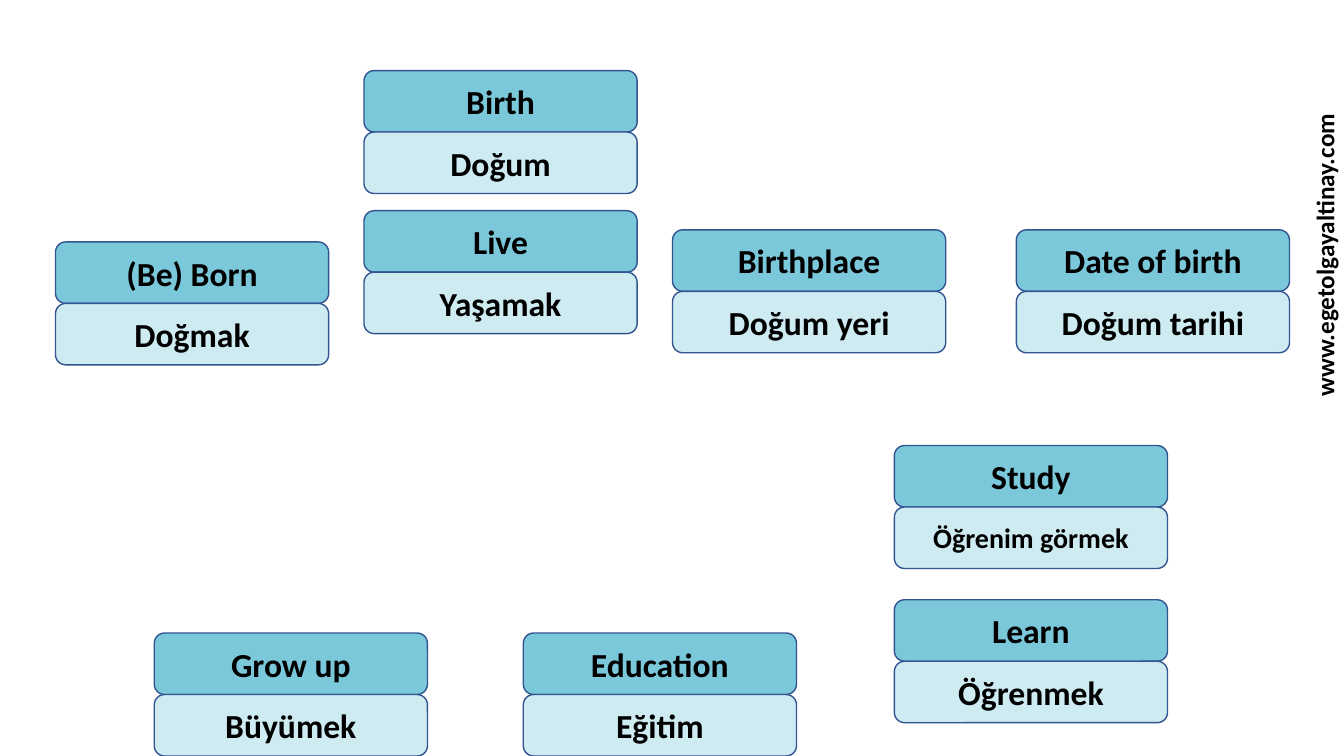
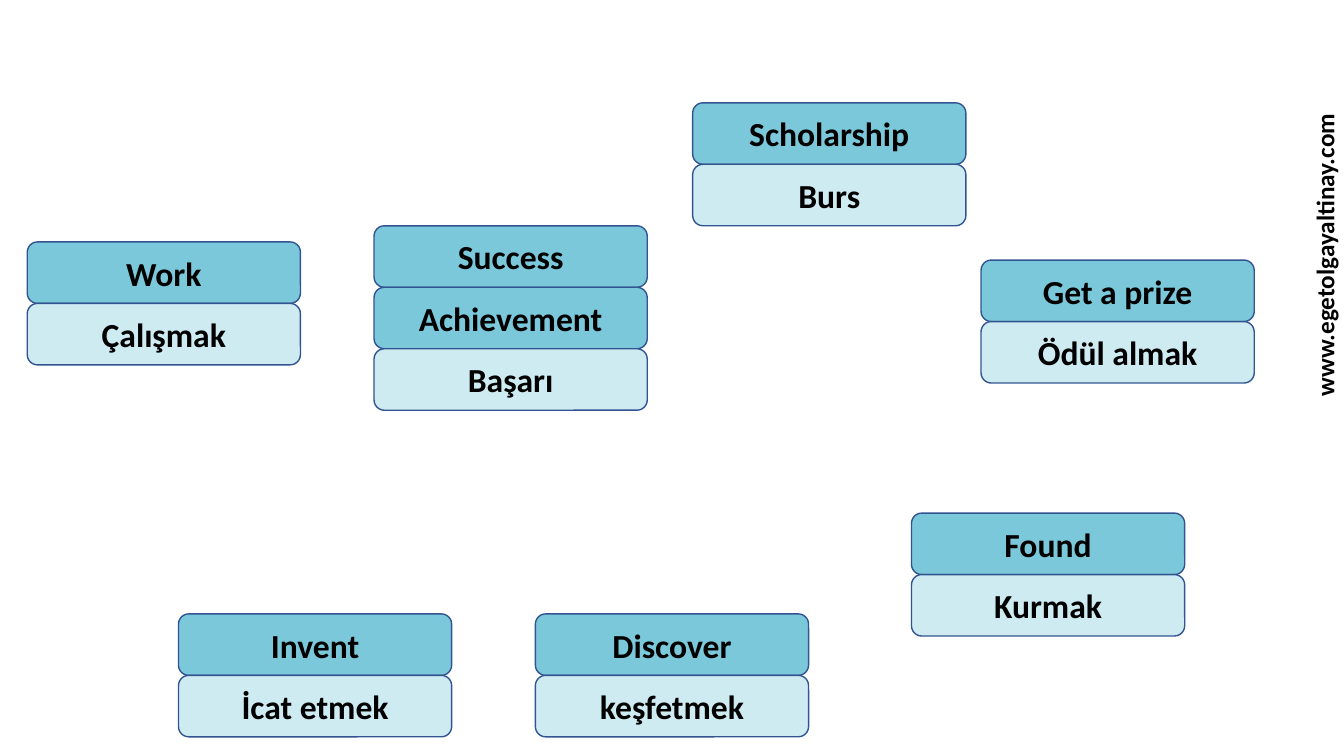
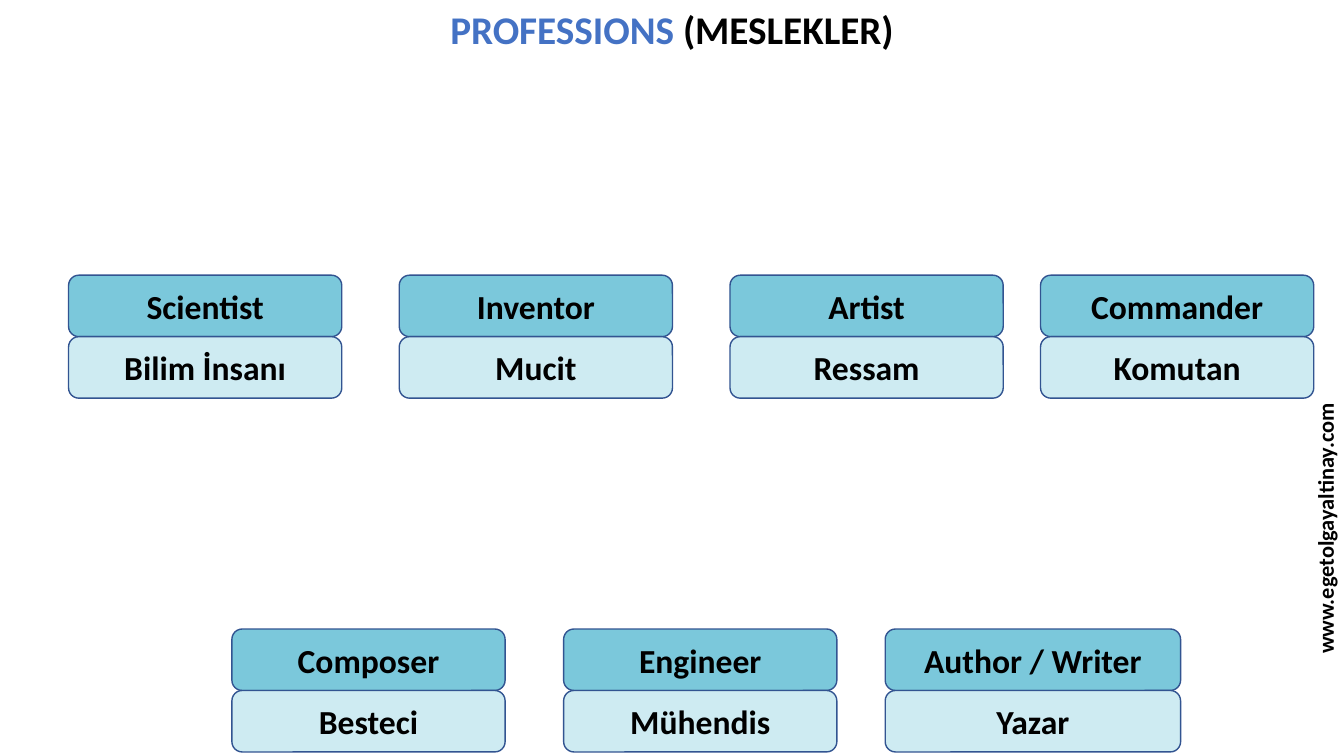
from pptx import Presentation
from pptx.dml.color import RGBColor
from pptx.enum.shapes import MSO_SHAPE
from pptx.enum.text import MSO_ANCHOR, PP_ALIGN
from pptx.util import Inches, Pt

COLORS = {
    "english": "7BC8DB",
    "turkish": "CEEBF2",
    "outline": "325491",
    "text": "000000",
    "accent": "4472C4",
}
FONT = "Calibri"
CARD_WIDTH = 2.71
ROW_HEIGHT = 0.61
SITE = "www.egetolgayaltinay.com"

# Each card: left, top, words from top to bottom (the last one is Turkish).
LIFE_CARDS = [
    (0.55, 2.4, ["(Be) Born", "Doğmak"]),
    (3.61, 0.7, ["Birth", "Doğum"]),
    (3.61, 2.09, ["Live", "Yaşamak"]),
    (6.67, 2.28, ["Birthplace", "Doğum yeri"]),
    (10.08, 2.28, ["Date of birth", "Doğum tarihi"]),
    (1.53, 6.28, ["Grow up", "Büyümek"]),
    (5.19, 6.28, ["Education", "Eğitim"]),
    (8.87, 4.42, ["Study", "Öğrenim görmek"], {"turkish_size": 20}),
    (8.87, 5.95, ["Learn", "Öğrenmek"]),
]
CAREER_CARDS = [
    (0.27, 2.4, ["Work", "Çalışmak"]),
    (3.71, 2.24, ["Success", "Achievement", "Başarı"]),
    (6.87, 1.02, ["Scholarship", "Burs"]),
    (9.73, 2.58, ["Get a prize", "Ödül almak"]),
    (1.77, 6.09, ["Invent", "İcat etmek"]),
    (5.31, 6.09, ["Discover", "keşfetmek"]),
    (9.04, 5.09, ["Found", "Kurmak"]),
]
PROFESSION_CARDS = [
    (0.68, 2.73, ["Scientist", "Bilim İnsanı"]),
    (3.96, 2.73, ["Inventor", "Mucit"]),
    (7.24, 2.73, ["Artist", "Ressam"]),
    (10.32, 2.73, ["Commander", "Komutan"]),
    (2.3, 6.24, ["Composer", "Besteci"]),
    (5.59, 6.24, ["Engineer", "Mühendis"]),
    (8.78, 6.24, ["Author / Writer", "Yazar"], {"width": 2.93}),
]


def color(name):
    return RGBColor.from_string(COLORS[name])


def write_text(box, *parts, size=24, anchor=MSO_ANCHOR.TOP):
    """Write one centred bold paragraph from (text, colour name) parts."""
    frame = box.text_frame
    frame.word_wrap = True
    frame.vertical_anchor = anchor
    para = frame.paragraphs[0]
    para.alignment = PP_ALIGN.CENTER
    for text, color_name in parts:
        span = para.add_run()
        span.text = text
        span.font.name = FONT
        span.font.size = Pt(size)
        span.font.bold = True
        span.font.color.rgb = color(color_name)


def add_card(page, left, top, words, width=CARD_WIDTH, turkish_size=24):
    """Stack English words over their Turkish meaning."""
    for row, word in enumerate(words):
        is_turkish = row == len(words) - 1
        box = page.shapes.add_shape(
            MSO_SHAPE.ROUNDED_RECTANGLE, Inches(left),
            Inches(top + row * ROW_HEIGHT), Inches(width), Inches(ROW_HEIGHT))
        box.shadow.inherit = False
        box.fill.solid()
        box.fill.fore_color.rgb = color("turkish" if is_turkish else "english")
        box.line.color.rgb = color("outline")
        box.line.width = Pt(1)
        write_text(box, (word, "text"), size=turkish_size if is_turkish else 24,
                   anchor=MSO_ANCHOR.MIDDLE)


def add_site(page, left=10.92, top=2.33, height=0.4, size=18):
    box = page.shapes.add_textbox(
        Inches(left), Inches(top), Inches(4.43), Inches(height))
    box.rotation = 270
    write_text(box, (SITE, "text"), size=size)


def add_title(page, english, turkish):
    box = page.shapes.add_textbox(
        Inches(3.23), Inches(0), Inches(6.87), Inches(0.57))
    write_text(box, (english + " ", "accent"), (turkish, "text"), size=28)


def add_vocabulary_page(deck, cards, **site_format):
    page = deck.slides.add_slide(deck.slide_layouts[6])
    for left, top, words, *options in cards:
        add_card(page, left, top, words, **(options[0] if options else {}))
    add_site(page, **site_format)
    return page


def main():
    deck = Presentation()
    deck.slide_width = Inches(13.33)
    deck.slide_height = Inches(7.5)
    add_vocabulary_page(deck, LIFE_CARDS)
    add_vocabulary_page(deck, CAREER_CARDS)
    professions = add_vocabulary_page(
        deck, PROFESSION_CARDS, left=10.93, top=5.06, height=0.37, size=16)
    add_title(professions, "PROFESSIONS", "(MESLEKLER)")
    deck.save("out.pptx")


if __name__ == "__main__":
    main()
